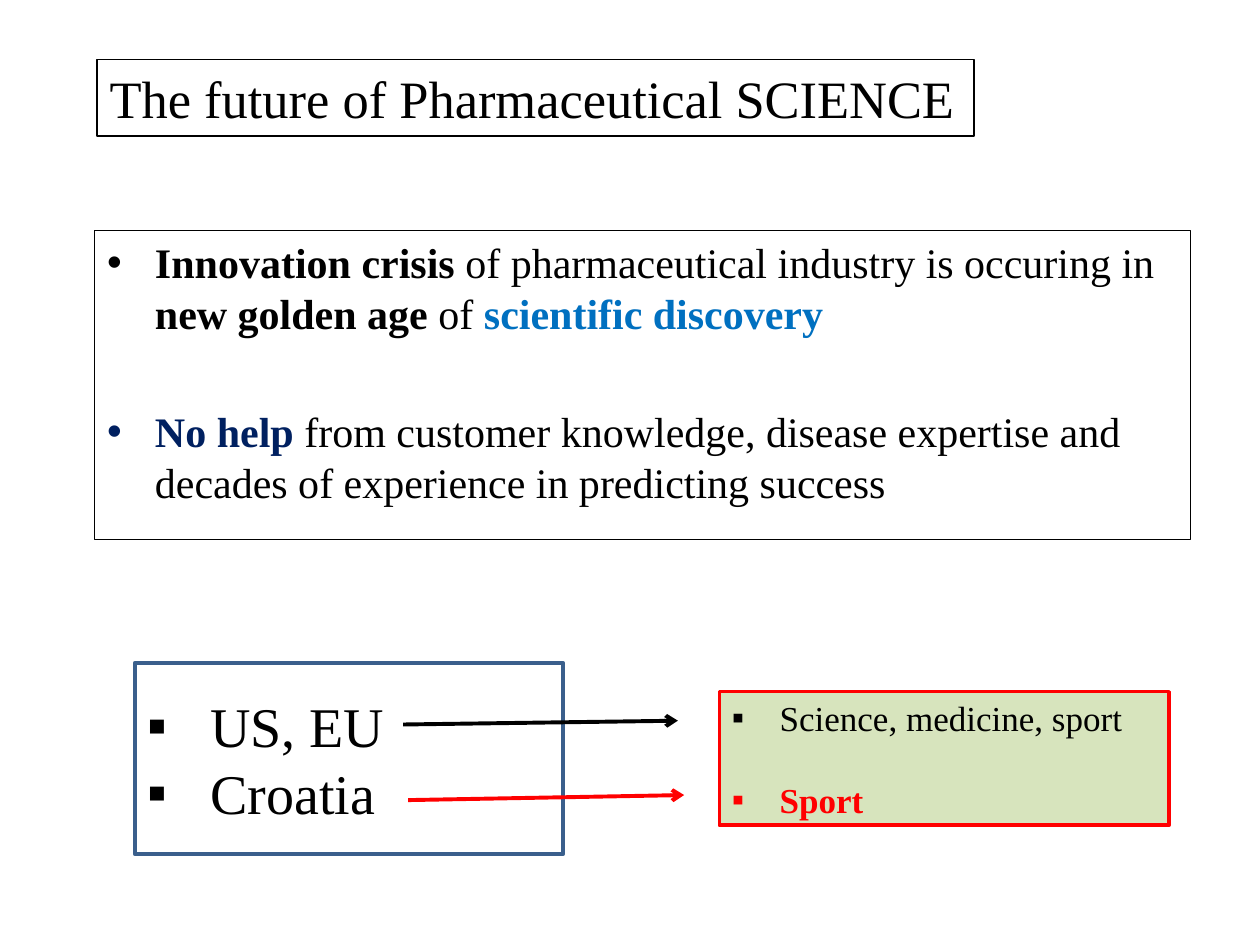
from lxml import etree
from pptx import Presentation
from pptx import util as u
from pptx.dml.color import RGBColor
from pptx.enum import shapes, text
from pptx.oxml import ns

BLACK = RGBColor(0x00, 0x00, 0x00)
RED = RGBColor(0xFF, 0x00, 0x00)
BLUE = RGBColor(0x00, 0x70, 0xC0)
NAVY = RGBColor(0x00, 0x20, 0x60)
STEEL = RGBColor(0x3A, 0x5F, 0x8C)
PALE_GREEN = RGBColor(0xD7, 0xE4, 0xBD)

COLUMNS, ROWS = 100, 75


def write(paragraph, words, size, color=BLACK, bold=False, font="Times New Roman"):
    run = paragraph.add_run()
    run.text = words
    run.font.name = font
    run.font.size = u.Pt(size)
    run.font.bold = bold
    run.font.color.rgb = color


class SlideBuilder:
    def __init__(self, deck):
        self.slide = deck.slides.add_slide(deck.slide_layouts[1])
        self.column = deck.slide_width / COLUMNS
        self.row = deck.slide_height / ROWS

    def point(self, column, row):
        return u.Emu(round(column * self.column)), u.Emu(round(row * self.row))

    def frame(self, box, place, line, width, fill=None):
        box.left, box.top = self.point(*place[:2])
        box.width, box.height = self.point(*place[2:])
        box.line.color.rgb = line
        box.line.width = u.Pt(width)
        if fill is None:
            box.fill.background()
        else:
            box.fill.solid()
            box.fill.fore_color.rgb = fill
        return box

    def title(self, words, place, size):
        heading = self.frame(self.slide.shapes.title, place, BLACK, 0.75)
        self.fill_text(heading, [[(words, {})]], size, anchor=text.MSO_ANCHOR.TOP)

    def body(self, items, place, size, **layout):
        content = self.frame(self.slide.placeholders[1], place, BLACK, 0.75)
        self.fill_text(content, items, size, anchor=text.MSO_ANCHOR.TOP, **layout)

    def panel(self, items, place, size, line, fill=None, **layout):
        rectangle = self.slide.shapes.add_shape(
            shapes.MSO_SHAPE.RECTANGLE, *self.point(*place[:2]), *self.point(*place[2:]))
        rectangle.shadow.inherit = False
        self.frame(rectangle, place, line, 2, fill)
        self.fill_text(rectangle, items, size, anchor=text.MSO_ANCHOR.MIDDLE, **layout)

    def fill_text(self, box, items, size, anchor, bullet=None, indent=0, gap=0):
        frame = box.text_frame
        frame.word_wrap = True
        frame.auto_size = text.MSO_AUTO_SIZE.NONE
        frame.vertical_anchor = anchor
        for index, item in enumerate(items):
            paragraph = frame.add_paragraph() if index else frame.paragraphs[0]
            if bullet:
                self.bullet(paragraph, bullet, indent)
            paragraph.alignment = text.PP_ALIGN.LEFT
            paragraph.space_before = u.Pt(gap if index else 0)
            for words, style in item:
                write(paragraph, words, size, **style)

    def bullet(self, paragraph, mark, indent):
        properties = paragraph._p.get_or_add_pPr()
        properties.set("marL", str(u.Inches(indent)))
        properties.set("indent", str(-u.Inches(indent)))
        etree.SubElement(properties, ns.qn("a:buFont"), typeface="Arial")
        etree.SubElement(properties, ns.qn("a:buChar"), char=mark)

    def arrow(self, start, end, color):
        connector = self.slide.shapes.add_connector(
            shapes.MSO_CONNECTOR.STRAIGHT, *self.point(*start), *self.point(*end))
        connector.line.color.rgb = color
        connector.line.width = u.Pt(2.25)
        etree.SubElement(connector.line._get_or_add_ln(), ns.qn("a:tailEnd"), type="arrow")
        etree.SubElement(connector._element.spPr, ns.qn("a:effectLst"))


def main():
    deck = Presentation()
    deck.slide_width, deck.slide_height = u.Inches(10), u.Inches(7.5)
    page = SlideBuilder(deck)

    page.title("The future of Pharmaceutical SCIENCE", (7.7, 4.7, 69.6, 6.1), 30)
    page.body([
        [("Innovation crisis ", {"bold": True}),
         ("of pharmaceutical industry is occuring in ", {}),
         ("new golden age ", {"bold": True}),
         ("of ", {}),
         ("scientific discovery", {"color": BLUE, "bold": True})],
        [("No help ", {"color": NAVY, "bold": True}),
         ("from customer knowledge, disease expertise and decades of experience "
          "in predicting success", {})],
    ], (7.5, 18.3, 87, 24.5), 24, bullet="•", indent=0.38, gap=39)

    page.panel([[("US, EU", {})], [("Croatia", {})]],
               (10.7, 52.6, 34, 15.2), 32, STEEL, bullet="▪", indent=0.5)
    page.arrow((32, 57.5), (53.8, 57.2), BLACK)
    page.arrow((32.4, 63.5), (54.3, 63.1), RED)
    page.panel([[("Science, medicine, sport", {})],
                [("Sport", {"color": RED, "bold": True})]],
               (57.1, 54.9, 35.7, 10.6), 20, RED, PALE_GREEN,
               bullet="▪", indent=0.38, gap=23)

    deck.save("out.pptx")


if __name__ == "__main__":
    main()
